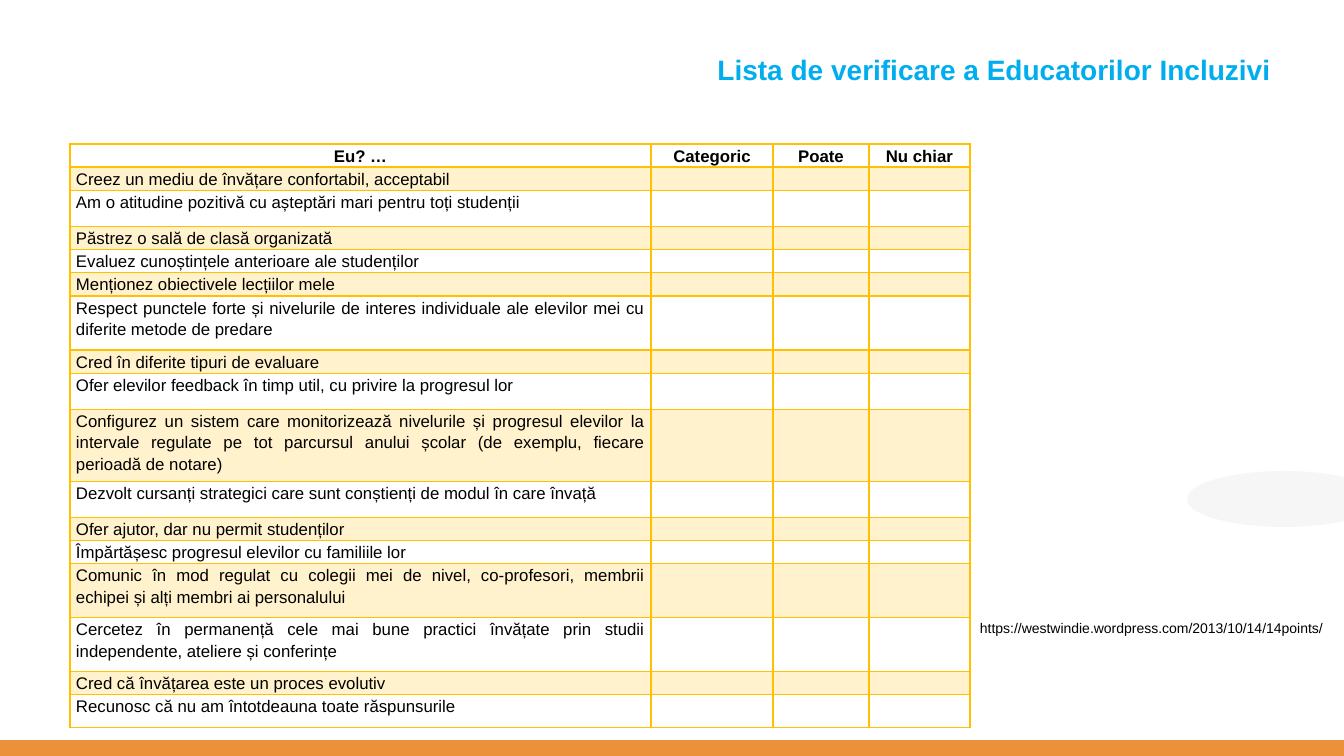
from dataclasses import dataclass

from lxml.etree import SubElement
from pptx import Presentation
from pptx.dml.color import RGBColor
from pptx.enum.shapes import MSO_SHAPE as Shape
from pptx.enum.text import MSO_ANCHOR as Anchor, MSO_AUTO_SIZE as AutoSize, PP_ALIGN as Align
from pptx.oxml import parse_xml
from pptx.oxml.ns import nsdecls, qn
from pptx.util import Emu, Pt

EMU_PER_PX = 914400 / 100.8


@dataclass(frozen=True)
class Theme:
    font: str = "Arial"
    title: str = "00AEEF"
    ink: str = "000000"
    gold: str = "FFC000"
    footer: str = "EA9139"
    oval: str = "F5F5F5"
    band_alpha: int = 20
    oval_alpha: int = 89
    title_size: int = 20
    table_size: int = 12
    link_size: int = 10


THEME = Theme()
HEADERS = ["Eu? …", "Categoric", "Poate", "Nu chiar"]
COLUMN_WIDTHS = [581, 122, 96, 101]
HEADER_HEIGHT = 23
STATEMENTS = [
    (23, "Creez un mediu de învățare confortabil, acceptabil"),
    (36, "Am o atitudine pozitivă cu așteptări mari pentru toți studenții"),
    (23, "Păstrez o sală de clasă organizată"),
    (23, "Evaluez cunoștințele anterioare ale studenților"),
    (23, "Menționez obiectivele lecțiilor mele"),
    (54, "Respect punctele forte și nivelurile de interes individuale ale elevilor mei "
         "cu diferite metode de predare"),
    (23, "Cred în diferite tipuri de evaluare"),
    (36, "Ofer elevilor feedback în timp util, cu privire la progresul lor"),
    (72, "Configurez un sistem care monitorizează nivelurile și progresul elevilor la "
         "intervale regulate pe tot parcursul anului școlar (de exemplu, fiecare "
         "perioadă de notare)"),
    (36, "Dezvolt cursanți strategici care sunt conștienți de modul în care învață"),
    (23, "Ofer ajutor, dar nu permit studenților"),
    (23, "Împărtășesc progresul elevilor cu familiile lor"),
    (54, "Comunic în mod regulat cu colegii mei de nivel, co-profesori, membrii "
         "echipei și alți membri ai personalului"),
    (54, "Cercetez în permanență cele mai bune practici învățate prin studii "
         "independente, ateliere și conferințe"),
    (23, "Cred că învățarea este un proces evolutiv"),
    (33, "Recunosc că nu am întotdeauna toate răspunsurile"),
]


def px(length):
    return Emu(round(length * EMU_PER_PX))


def paint(fill, color, alpha=100):
    fill.solid()
    fill.fore_color.rgb = RGBColor.from_string(color)
    if alpha < 100:
        tint = fill._xPr.find(qn("a:solidFill"))[0]
        SubElement(tint, qn("a:alpha"), val=str(alpha * 1000))


def add_span(para, text, size, color, bold=False):
    span = para.add_run()
    span.text = text
    span.font.name = THEME.font
    span.font.size = Pt(size)
    span.font.bold = bold
    span.font.color.rgb = RGBColor.from_string(color)


def set_margins(target, side, top):
    target.margin_left = target.margin_right = px(side)
    target.margin_top = target.margin_bottom = px(top)


def add_decoration(page, kind, left, top, width, height, color, alpha=100):
    shape = page.shapes.add_shape(kind, px(left), px(top), px(width), px(height))
    shape.shadow.inherit = False
    shape.line.fill.background()
    paint(shape.fill, color, alpha)


def set_title(page, text):
    title = page.shapes.title
    title.left, title.top, title.width, title.height = px(324), px(51), px(957), px(93)
    frame = title.text_frame
    frame.word_wrap = True
    frame.auto_size = AutoSize.NONE
    frame.vertical_anchor = Anchor.TOP
    set_margins(frame, 10, 5)
    para = frame.paragraphs[0]
    para.alignment = Align.RIGHT
    para.line_spacing = 0.9
    para.space_before = Pt(0)
    add_span(para, text, THEME.title_size, THEME.title, bold=True)


def add_link_text(page, text):
    box = page.shapes.add_textbox(px(970), px(611), px(374), px(37))
    frame = box.text_frame
    frame.word_wrap = True
    frame.auto_size = AutoSize.SHAPE_TO_FIT_TEXT
    set_margins(frame, 10, 10)
    add_span(frame.paragraphs[0], text, THEME.link_size, THEME.ink)


def set_borders(cell, top, bottom):
    properties = cell._tc.get_or_add_tcPr()
    widths = {"lnL": 1, "lnR": 1, "lnT": top, "lnB": bottom}
    for index, (side, width) in enumerate(widths.items()):
        properties.insert(index, parse_xml(
            f'<a:{side} {nsdecls("a")} w="{Pt(width)}"><a:solidFill>'
            f'<a:srgbClr val="{THEME.gold}"/></a:solidFill></a:{side}>'))


def format_cell(cell, text, row):
    is_header = row == 0
    set_margins(cell, 6, 0)
    para = cell.text_frame.paragraphs[0]
    para.alignment = Align.CENTER if is_header else Align.JUSTIFY
    para.line_spacing = 1.15
    if text:
        add_span(para, text, THEME.table_size, THEME.ink, bold=is_header)
    else:
        SubElement(para._p, qn("a:endParaRPr"), sz=str(THEME.table_size * 100))
    if row % 2:
        paint(cell.fill, THEME.gold, THEME.band_alpha)
    else:
        cell.fill.background()
    set_borders(cell, top=2 if row == 1 else 1, bottom=2 if is_header else 1)


def add_checklist(page):
    blanks = [""] * (len(HEADERS) - 1)
    rows = [(HEADER_HEIGHT, HEADERS)]
    rows += [(height, [text, *blanks]) for height, text in STATEMENTS]
    total_height = sum(height for height, texts in rows)
    table = page.shapes.add_table(len(rows), len(HEADERS), px(70), px(144),
                                  px(sum(COLUMN_WIDTHS)), px(total_height)).table
    table.first_row = table.horz_banding = False
    for column, width in zip(table.columns, COLUMN_WIDTHS):
        column.width = px(width)
    for row, (height, texts) in enumerate(rows):
        table.rows[row].height = px(height)
        for column, text in enumerate(texts):
            format_cell(table.cell(row, column), text, row)


def main():
    deck = Presentation()
    deck.slide_width, deck.slide_height = px(1344), px(756)
    page = deck.slides.add_slide(deck.slide_layouts[5])
    add_decoration(page, Shape.OVAL, 1187, 471, 194, 56, THEME.oval, THEME.oval_alpha)
    add_decoration(page, Shape.RECTANGLE, 0, 740, 1344, 16, THEME.footer)
    set_title(page, "Lista de verificare a Educatorilor Incluzivi")
    add_link_text(page, "https://westwindie.wordpress.com/2013/10/14/14points/")
    add_checklist(page)
    deck.save("out.pptx")


if __name__ == "__main__":
    main()
